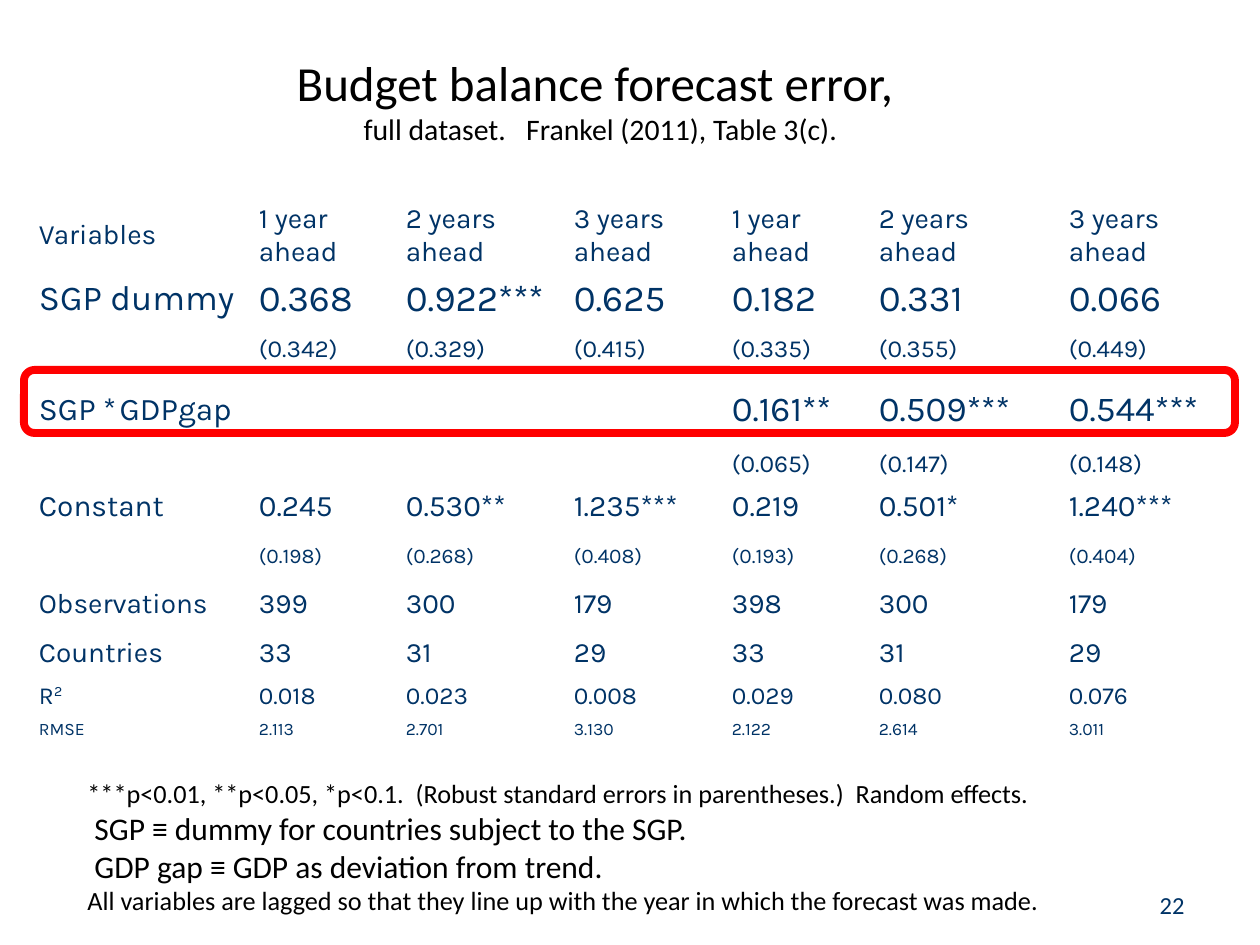
from typing import NamedTuple

from pptx import Presentation
from pptx.dml.color import RGBColor
from pptx.enum.shapes import MSO_SHAPE
from pptx.enum.text import MSO_ANCHOR, MSO_AUTO_SIZE, PP_ALIGN
from pptx.util import Emu, Pt

NAVY, BLACK, RED = "003366", "000000", "FF0000"
BODY, DATA = "Calibri", "Karla"


class Box(NamedTuple):
    left: int
    top: int
    width: int
    height: int


class Run(NamedTuple):
    text: str
    size: int
    baseline: int = 0


class Row(NamedTuple):
    height: int
    label: list[Run]
    size: int
    values: list[str]


COLUMNS = [220, 147, 168, 158, 147, 190, 177]
ROWS = [
    Row(74, [Run("Variables", 16)], 16, ["1 year ahead", "2 years ahead", "3 years ahead"] * 2),
    Row(52, [Run("SGP dummy", 20)], 21, ["0.368", "0.922***", "0.625", "0.182", "0.331", "0.066"]),
    Row(49, [], 14, ["(0.342)", "(0.329)", "(0.415)", "(0.335)", "(0.355)", "(0.449)"]),
    Row(71, [Run("SGP *", 18), Run(" ", 8), Run("GDPgap", 18)], 20,
        ["", "", "", "0.161**", "0.509***", "0.544***"]),
    Row(32, [], 14, ["", "", "", "(0.065)", "(0.147)", "(0.148)"]),
    Row(49, [Run("Constant", 17)], 17, ["0.245", "0.530**", "1.235***", "0.219", "0.501*", "1.240***"]),
    Row(49, [], 12, ["(0.198)", "(0.268)", "(0.408)", "(0.193)", "(0.268)", "(0.404)"]),
    Row(48, [Run("Observations", 16)], 16, ["399", "300", "179", "398", "300", "179"]),
    Row(49, [Run("Countries", 16)], 16, ["33", "31", "29"] * 2),
    Row(37, [Run("R", 14), Run("2", 14, 30000)], 14,
        ["0.018", "0.023", "0.008", "0.029", "0.080", "0.076"]),
    Row(28, [Run("RMSE", 10)], 10, ["2.113", "2.701", "3.130", "2.122", "2.614", "3.011"]),
]
TITLE = [Run("Budget balance forecast error, \v", 28),
         Run("full dataset.   Frankel (2011), Table 3(c).", 17)]
NOTES = [
    Run("***p<0.01, **p<0.05, *p<0.1.  (Robust standard errors in parentheses.)  Random effects.", 15),
    Run(" SGP ≡ dummy for countries subject to the SGP.", 18),
    Run(" GDP gap ≡ GDP as deviation from trend.", 18),
    Run("All variables are lagged so that they line up with the year in which the forecast was made.", 15),
]


def px(n: int) -> Emu:
    """Turn pixels into EMU."""
    return Emu(round(n * 914400 / 126))


def rgb(value: str) -> RGBColor:
    """Turn a hex string into a colour."""
    return RGBColor.from_string(value)


def assign(target, values: dict) -> None:
    """Set every attribute named in the dict."""
    for name, value in values.items():
        setattr(target, name, value)


def write(p, runs: list[Run], font: str, color: str) -> None:
    """Add formatted runs to a paragraph, with a break after a run ending in a vertical tab."""
    for run in runs:
        r = p.add_run()
        r.text = run.text.rstrip("\v")
        assign(r.font, {"size": Pt(run.size), "name": font, "bold": False})
        r.font.color.rgb = rgb(color)
        if run.baseline:
            r.font._element.set("baseline", str(run.baseline))
        if run.text.endswith("\v"):
            p.add_line_break()


def add_text(s, box: Box, lines: list[list[Run]], color: str, frame: dict,
             align: PP_ALIGN = PP_ALIGN.LEFT) -> None:
    """Add a text box with one paragraph per line."""
    tf = s.shapes.add_textbox(*map(px, box)).text_frame
    assign(tf, frame)
    for i, runs in enumerate(lines):
        p = tf.add_paragraph() if i else tf.paragraphs[0]
        p.alignment = align
        write(p, runs, BODY, color)


def set_title(s, box: Box, runs: list[Run]) -> None:
    """Place and fill the title placeholder."""
    sp = s.shapes.title
    assign(sp, dict(zip(Box._fields, map(px, box))))
    tf = sp.text_frame
    assign(tf, {"vertical_anchor": MSO_ANCHOR.MIDDLE, "word_wrap": True,
                "auto_size": MSO_AUTO_SIZE.NONE})
    p = tf.paragraphs[0]
    p.alignment = PP_ALIGN.CENTER
    write(p, runs, BODY, BLACK)


def fill_cell(cell, runs: list[Run], size: int) -> None:
    """Format a table cell and write its runs."""
    assign(cell, {"margin_left": px(8), "margin_right": px(8), "margin_top": px(4),
                  "margin_bottom": px(4), "vertical_anchor": MSO_ANCHOR.MIDDLE})
    cell.fill.background()
    p = cell.text_frame.paragraphs[0]
    write(p, runs, DATA, NAVY)
    if not runs:
        p._p.get_or_add_endParaRPr().set("sz", str(size * 100))


def add_results(s, left: int, top: int) -> None:
    """Add the regression table."""
    box = Box(left, top, sum(COLUMNS), sum(row.height for row in ROWS))
    table = s.shapes.add_table(len(ROWS), len(COLUMNS), *map(px, box)).table
    assign(table, {"first_row": False, "horz_banding": False})
    for column, width in zip(table.columns, COLUMNS):
        column.width = px(width)
    for line, row in zip(table.rows, ROWS):
        line.height = px(row.height)
        values = [[Run(value, row.size)] if value else [] for value in row.values]
        for cell, runs in zip(line.cells, [row.label, *values]):
            fill_cell(cell, runs, row.size)


def add_highlight(s, box: Box) -> None:
    """Add the rounded red outline."""
    sp = s.shapes.add_shape(MSO_SHAPE.ROUNDED_RECTANGLE, *map(px, box))
    sp.shadow.inherit = False
    sp.fill.background()
    sp.line.color.rgb = rgb(RED)
    sp.line.width = Pt(4.5)


def main() -> None:
    """Build and save the slide."""
    prs = Presentation()
    assign(prs, {"slide_width": px(1260), "slide_height": px(945)})
    s = prs.slides.add_slide(prs.slide_layouts[5])
    add_text(s, Box(903, 861, 294, 65), [[Run("22", 14)]], NAVY,
             {"word_wrap": True, "vertical_anchor": MSO_ANCHOR.BOTTOM}, PP_ALIGN.RIGHT)
    add_results(s, 31, 198)
    set_title(s, Box(263, 44, 675, 111), TITLE)
    add_text(s, Box(75, 771, 991, 152), [[run] for run in NOTES], BLACK,
             {"word_wrap": False, "vertical_anchor": MSO_ANCHOR.MIDDLE})
    add_highlight(s, Box(24, 370, 1211, 63))
    prs.save("out.pptx")


if __name__ == "__main__":
    main()
